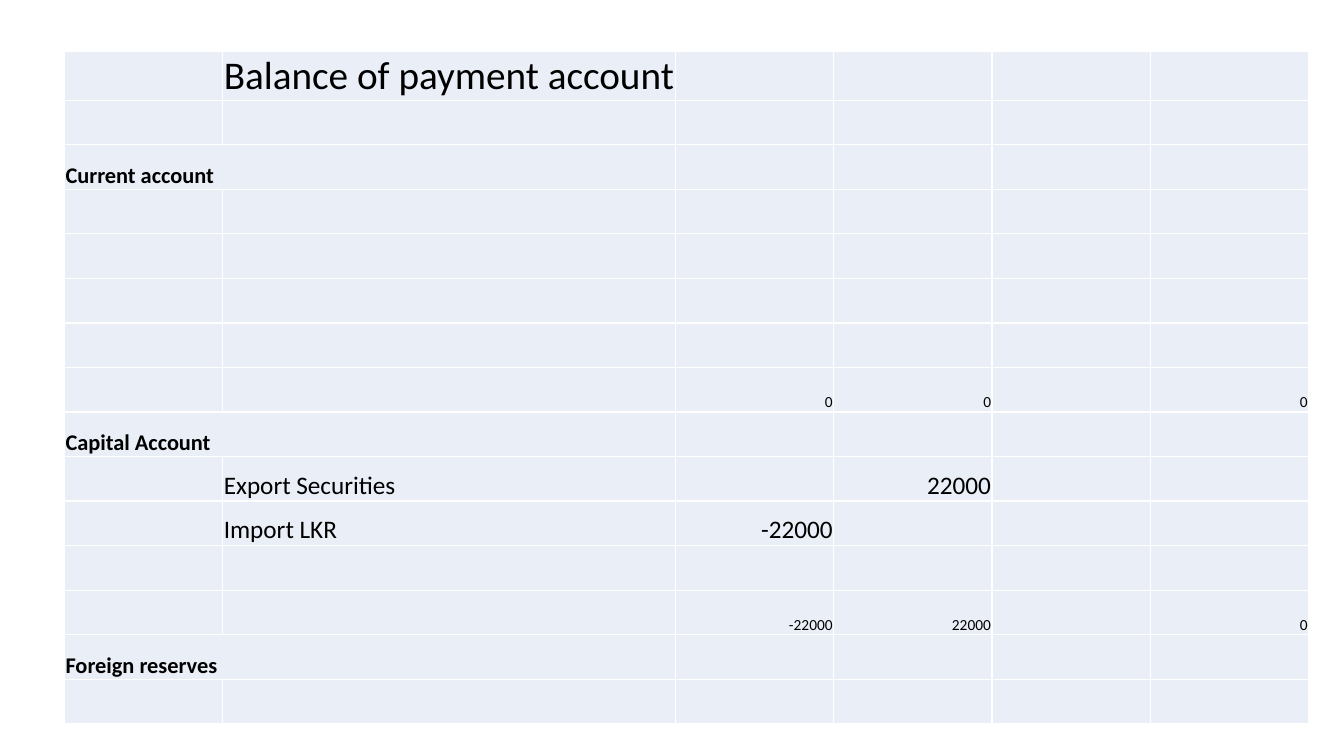
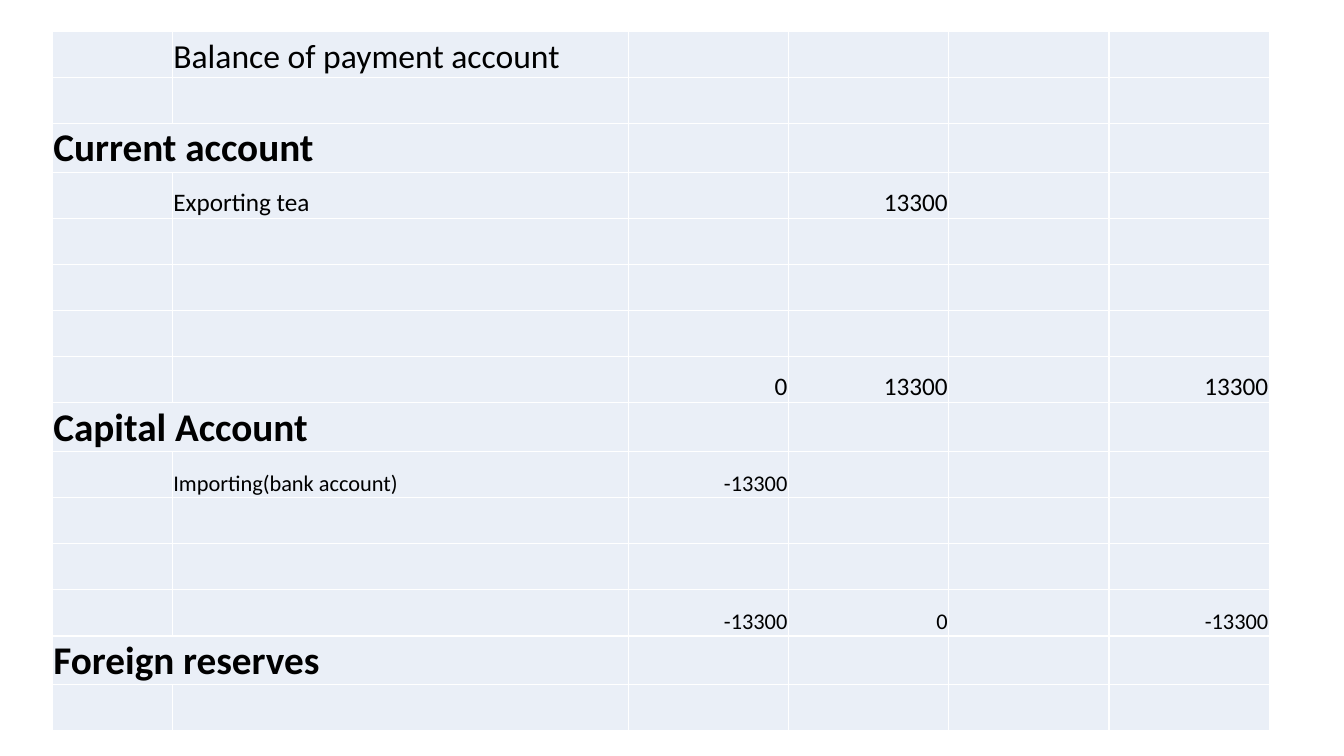
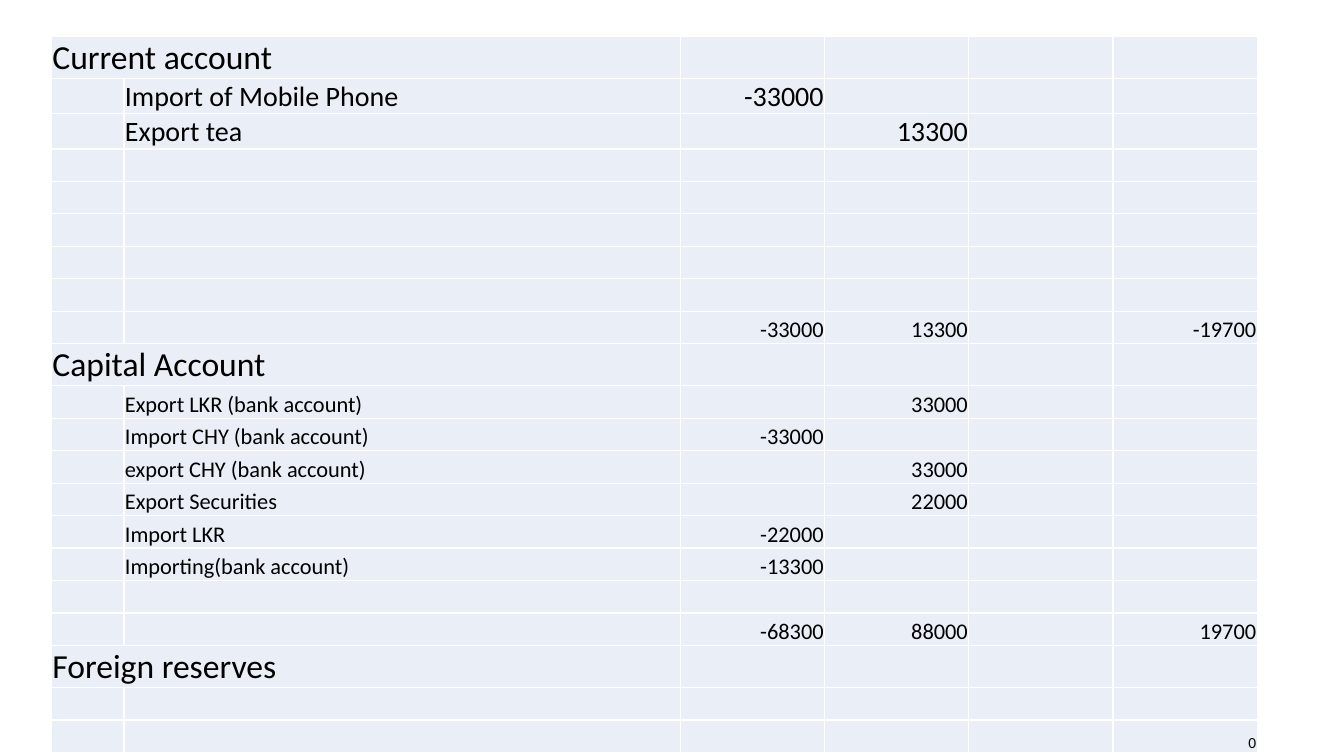
from dataclasses import dataclass

from pptx import Presentation
from pptx.dml.color import RGBColor
from pptx.enum.text import MSO_ANCHOR, PP_ALIGN
from pptx.util import Inches, Pt

SLIDE_WIDTH, SLIDE_HEIGHT = 13.33, 7.5
PALE_BLUE = RGBColor(0xEA, 0xEF, 0xF7)
BLACK = RGBColor(0, 0, 0)
FONT = "Calibri"
INSET = 0.01
LINE_SPACING = 1.22
LABEL, DEBIT, CREDIT, NET = 1, 2, 3, 5


@dataclass
class Entry:
    """One row of an account; a heading spans the first two columns."""
    label: str = ""
    debit: str = ""
    credit: str = ""
    net: str = ""
    size: int = 16
    heading: bool = False
    bold: bool = False


def blanks(count):
    return [Entry() for _ in range(count)]


def heading(label, size, bold=False):
    return Entry(label, size=size, heading=True, bold=bold)


def total(debit, credit, net, size=16):
    return Entry("", debit, credit, net, size)


def write(cell, text, entry, align):
    cell.text_frame.text = text
    paragraph = cell.text_frame.paragraphs[0]
    paragraph.alignment = align
    for run in paragraph.runs:
        run.font.name = FONT
        run.font.size = Pt(entry.size)
        run.font.bold = entry.bold
        run.font.color.rgb = BLACK


def style_cell(cell):
    cell.fill.solid()
    cell.fill.fore_color.rgb = PALE_BLUE
    cell.vertical_anchor = MSO_ANCHOR.BOTTOM
    cell.margin_left = cell.margin_right = cell.margin_top = Inches(INSET)
    cell.margin_bottom = 0


def fill_row(table, row, entry):
    if entry.heading:
        table.cell(row, 0).merge(table.cell(row, LABEL))
    label_column = 0 if entry.heading else LABEL
    if entry.label:
        write(table.cell(row, label_column), entry.label, entry, PP_ALIGN.LEFT)
    for column, amount in ((DEBIT, entry.debit), (CREDIT, entry.credit), (NET, entry.net)):
        if amount:
            write(table.cell(row, column), amount, entry, PP_ALIGN.RIGHT)


def add_account(slide, left, top, columns, base_height, entries):
    """Place an account table; rows share a base height and grow with large text."""
    heights = [max(base_height, entry.size * LINE_SPACING / 72 + INSET) for entry in entries]
    frame = slide.shapes.add_table(
        len(entries), len(columns), Inches(left), Inches(top),
        Inches(sum(columns)), Inches(sum(heights)))
    table = frame.table
    table.first_row = table.horz_banding = False
    for column, width in zip(table.columns, columns):
        column.width = Inches(width)
    for cell in table.iter_cells():
        style_cell(cell)
    for row, (entry, height) in enumerate(zip(entries, heights)):
        table.rows[row].height = Inches(height)
        fill_row(table, row, entry)


SECURITIES_ENTRIES = [
    Entry("Balance of payment account", size=28),
    *blanks(1),
    heading("Current account", 16, bold=True),
    *blanks(4),
    total("0", "0", "0", size=11),
    heading("Capital Account", 16, bold=True),
    Entry("Export Securities", credit="22000", size=18),
    Entry("Import LKR", debit="-22000", size=18),
    *blanks(1),
    total("-22000", "22000", "0", size=11),
    heading("Foreign reserves", 16, bold=True),
    *blanks(1),
]

TEA_ENTRIES = [
    Entry("Balance of payment account", size=24),
    *blanks(1),
    heading("Current account", 28, bold=True),
    Entry("Exporting tea", credit="13300", size=18),
    *blanks(3),
    total("0", "13300", "13300", size=18),
    heading("Capital Account", 28, bold=True),
    Entry("Importing(bank account)", debit="-13300"),
    *blanks(2),
    total("-13300", "0", "-13300"),
    heading("Foreign reserves", 28, bold=True),
    *blanks(1),
]

SUMMARY_ENTRIES = [
    heading("Current account", 24),
    Entry("Import of Mobile Phone", debit="-33000", size=20),
    Entry("Export tea", credit="13300", size=20),
    *blanks(5),
    total("-33000", "13300", "-19700"),
    heading("Capital Account", 24),
    Entry("Export LKR (bank account)", credit="33000"),
    Entry("Import CHY (bank account)", debit="-33000"),
    Entry("export CHY (bank account)", credit="33000"),
    Entry("Export Securities", credit="22000"),
    Entry("Import LKR", debit="-22000"),
    Entry("Importing(bank account)", debit="-13300"),
    *blanks(1),
    total("-68300", "88000", "19700"),
    heading("Foreign reserves", 24),
    *blanks(1),
    Entry(net="0", size=11),
]

# left, top, column widths, base row height, entries
ACCOUNTS = [
    (0.64, 0.51, [1.57, 4.49] + [1.57] * 4, 6.63 / 15, SECURITIES_ENTRIES),
    (0.52, 0.31, [1.19, 4.52] + [1.59] * 4, 6.86 / 15, TEA_ENTRIES),
    (0.51, 0.36, [0.72, 5.52] + [1.43] * 4, 6.77 / 21, SUMMARY_ENTRIES),
]


def main():
    deck = Presentation()
    deck.slide_width, deck.slide_height = Inches(SLIDE_WIDTH), Inches(SLIDE_HEIGHT)
    for account in ACCOUNTS:
        add_account(deck.slides.add_slide(deck.slide_layouts[6]), *account)
    deck.save("out.pptx")


if __name__ == "__main__":
    main()
